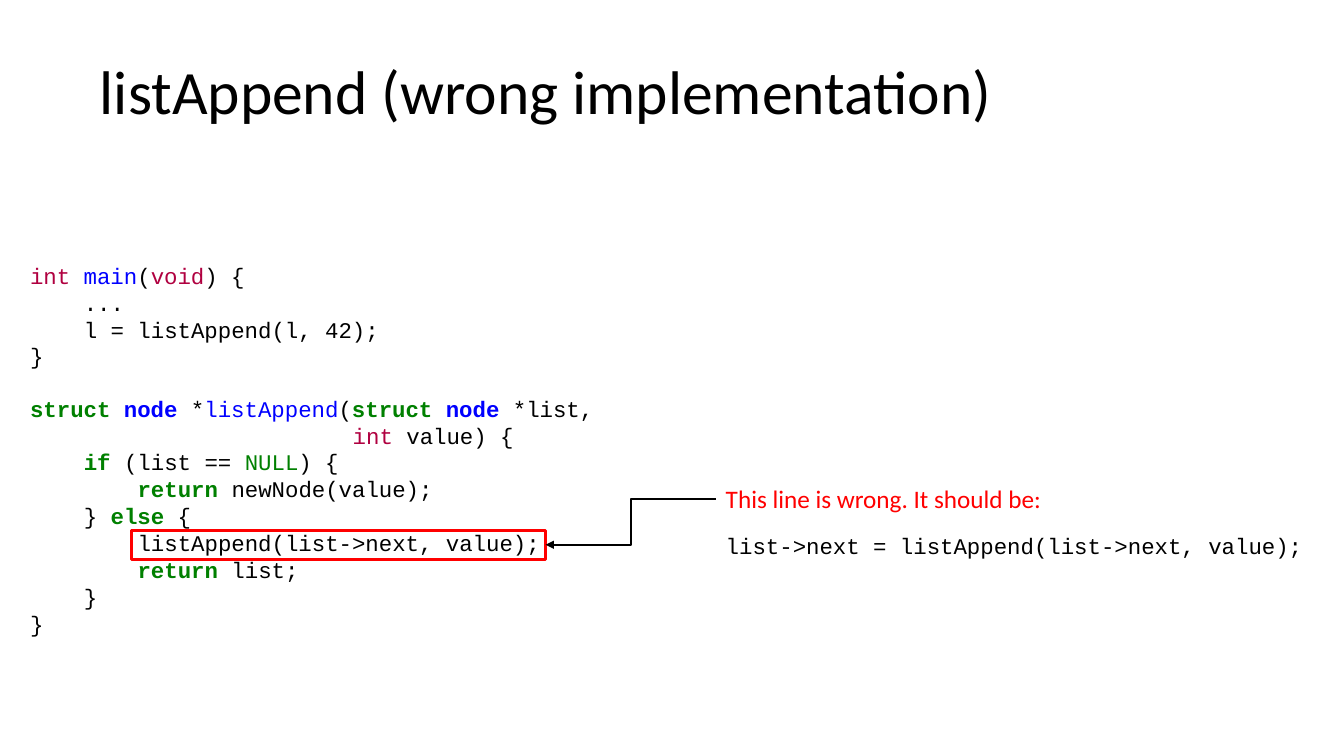
from lxml.etree import SubElement as Sub
from pptx import Presentation
from pptx.dml.color import RGBColor as Color
from pptx.enum.shapes import MSO_CONNECTOR as Link, MSO_SHAPE as Shape
from pptx.enum.text import MSO_ANCHOR as Anchor, PP_ALIGN as Align
from pptx.oxml.ns import qn
from pptx.util import Inches, Pt

WIDE, HIGH = Inches(13.33), Inches(7.5)
COL, ROW = WIDE / 100, HIGH / 30
MONO, SANS = "Courier New", "Calibri"
HUES = {
    "plain": "000000",
    "type": "B00040",
    "name": "0000FF",
    "word": "008000",
    "tag": "0000FF",
    "null": "008000",
    "alert": "FF0000",
}
BOLD = {"word", "tag"}

MAIN = [
    (0, [("int ", "type"), ("main", "name"), ("(", "plain"),
         ("void", "type"), (") {", "plain")]),
    (4, [("...", "plain")]),
    (4, [("l = listAppend(l, 42);", "plain")]),
    (0, [("}", "plain")]),
]
APPEND = [
    (0, [("struct ", "word"), ("node", "tag"), (" *", "plain"),
         ("listAppend", "name"), ("(", "plain"), ("struct ", "word"),
         ("node", "tag"), (" *list,", "plain")]),
    (24, [("int", "type"), (" value) {", "plain")]),
    (4, [("if", "word"), (" (list == ", "plain"), ("NULL", "null"),
         (") {", "plain")]),
    (8, [("return ", "word"), ("newNode(value);", "plain")]),
    (4, [("} ", "plain"), ("else", "word"), (" {", "plain")]),
    (8, [("listAppend(list->next, value);", "plain")]),
    (8, [("return", "word"), (" list;", "plain")]),
    (4, [("}", "plain")]),
    (0, [("}", "plain")]),
]


def grid(x, y, w, h):
    return round(x * COL), round(y * ROW), round(w * COL), round(h * ROW)


def write(par, text, size=16, font=MONO, hue="plain"):
    run = par.add_run()
    run.text = text
    face = run.font
    face.size, face.name, face.bold = Pt(size), font, hue in BOLD
    face.color.rgb = Color.from_string(HUES[hue])


def frame(slide, box):
    area = slide.shapes.add_textbox(*box)
    area.text_frame.word_wrap = True
    return area


def head(slide, box):
    title = slide.shapes.title
    title.left, title.top, title.width, title.height = box
    body = title.text_frame
    body.vertical_anchor = Anchor.MIDDLE
    par = body.paragraphs[0]
    par.alignment, par.line_spacing = Align.LEFT, 0.9
    write(par, "listAppend (wrong implementation)", size=44, font=SANS)


def code(slide, box):
    body = frame(slide, box).text_frame
    for num, (dent, parts) in enumerate(MAIN + APPEND):
        par = body.add_paragraph() if num else body.paragraphs[0]
        par._p.get_or_add_pPr().set("marL", str(Pt(9.6 * dent)))
        if num == len(MAIN):
            par.space_before = Pt(18.1)
        for text, hue in parts:
            write(par, text, hue=hue)

    x, y, w, h = box
    mark = slide.shapes.add_shape(
        Shape.RECTANGLE, x + round(8.3 * COL), y + round(0.7 * h),
        round(30.8 * COL), round(1.16 * ROW))
    mark.shadow.inherit = False
    mark.fill.background()
    mark.line.color.rgb = Color.from_string(HUES["alert"])
    mark.line.width = Pt(2.25)
    return mark


def advice(slide, box):
    x, y, w, h = box
    note = frame(slide, (x, y, round(0.82 * w), round(1.6 * ROW)))
    write(note.text_frame.paragraphs[0], "This line is wrong. It should be:",
          size=18, font=SANS, hue="alert")
    fix = frame(slide, (x, y + round(1.92 * ROW), w, round(1.48 * ROW)))
    write(fix.text_frame.paragraphs[0],
          "list->next = listAppend(list->next, value);")
    return note


def point(slide, note, mark):
    arrow = slide.shapes.add_connector(Link.ELBOW, 0, 0, 0, 0)
    arrow.begin_connect(note, 1)
    arrow.end_connect(mark, 3)
    arrow.line.color.rgb = Color.from_string(HUES["plain"])
    arrow.line.width = Pt(1.5)
    Sub(arrow.line._get_or_add_ln(), qn("a:tailEnd"), type="triangle")
    Sub(arrow._element.spPr, qn("a:effectLst"))


def main():
    deck = Presentation()
    deck.slide_width, deck.slide_height = WIDE, HIGH
    slide = deck.slides.add_slide(deck.slide_layouts[5])
    head(slide, grid(6.68, 0.84, 78.47, 5.8))
    mark = code(slide, grid(1.5, 10.2, 47.56, 15.48))
    note = advice(slide, grid(53.26, 19, 46.74, 3.4))
    point(slide, note, mark)
    deck.save("out.pptx")


if __name__ == "__main__":
    main()
